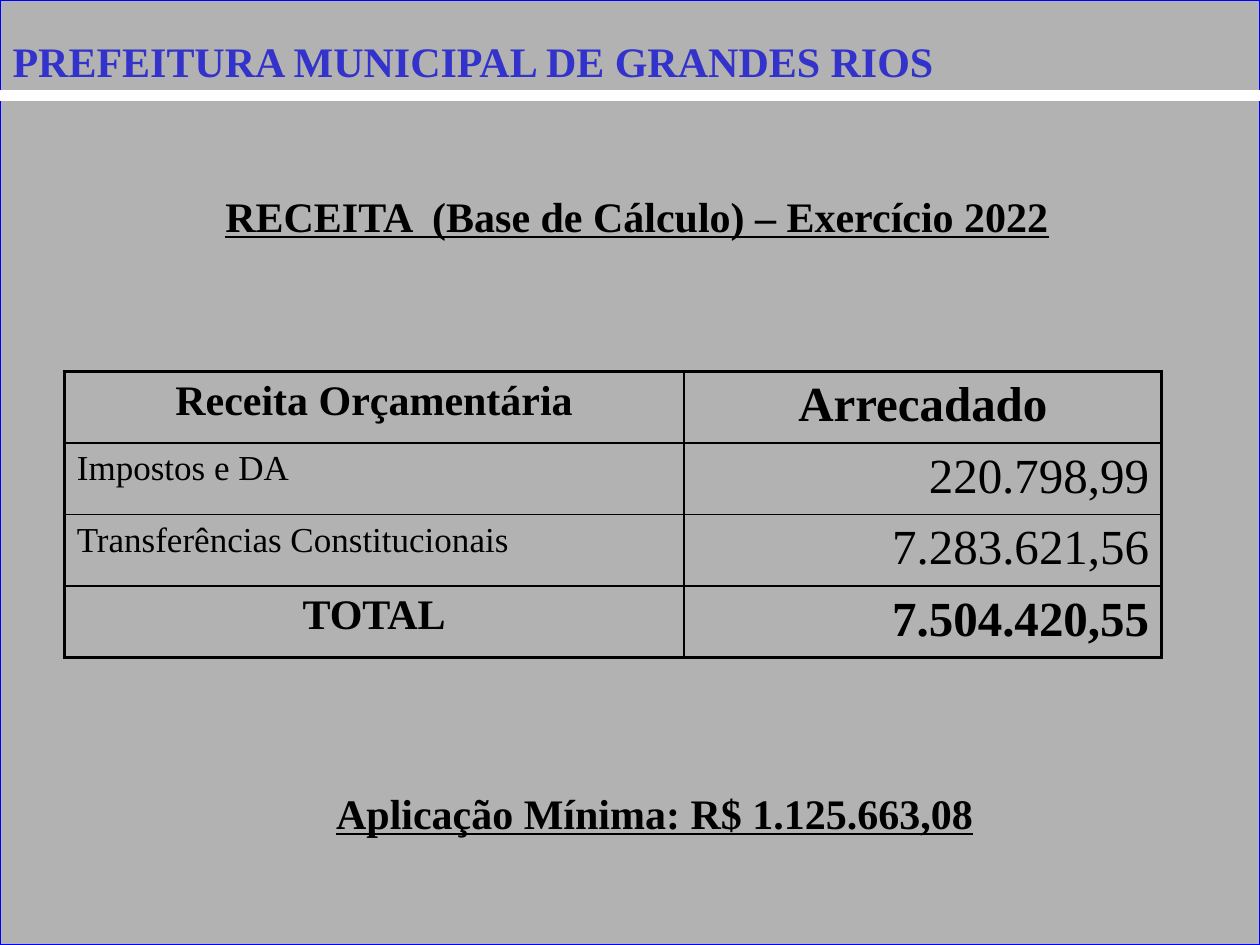
from lxml import etree
from pptx import Presentation, oxml
from pptx import util as u
from pptx.dml.color import RGBColor
from pptx.enum import shapes, text
from pptx.oxml import ns

Inches = u.Inches
CENTER, LEFT, RIGHT = text.PP_ALIGN.CENTER, text.PP_ALIGN.LEFT, text.PP_ALIGN.RIGHT


def color(hex_value):
    return RGBColor.from_string(hex_value)


def write(frame, content, size=24, fill="000000", bold=True, underline=False,
          align=CENTER, anchor=text.MSO_ANCHOR.TOP):
    frame.word_wrap = True
    frame.vertical_anchor = anchor
    paragraph = frame.paragraphs[0]
    paragraph.alignment = align
    run = paragraph.add_run()
    run.text = content
    font = run.font
    font.name = "Times New Roman"
    font.size = u.Pt(size)
    font.bold = bold
    font.underline = underline
    font.color.rgb = color(fill)
    return run


presentation = Presentation()
presentation.slide_width = Inches(10)
presentation.slide_height = Inches(7.5)
slide = presentation.slides.add_slide(presentation.slide_layouts[5])

# Grey backdrop with a thin blue frame
backdrop = slide.shapes.add_shape(
    shapes.MSO_SHAPE.RECTANGLE, 0, 0, Inches(10), Inches(7.5))
backdrop.shadow.inherit = False
backdrop.fill.solid()
backdrop.fill.fore_color.rgb = color("B2B2B2")
backdrop.line.color.rgb = color("0000FF")
backdrop.line.width = u.Pt(0.75)

# White rule under the header
rule = slide.shapes.add_connector(
    shapes.MSO_CONNECTOR.STRAIGHT, 0, Inches(0.76), Inches(10), Inches(0.76))
rule.line.color.rgb = color("FFFFFF")
rule.line.width = u.Pt(6)
etree.SubElement(rule._element.spPr, ns.qn("a:effectLst"))

# Header title with a text shadow, brought in front of the backdrop
title = slide.shapes.title
title.left, title.top = Inches(0), Inches(0.23)
title.width, title.height = Inches(8.23), Inches(0.5)
slide.shapes._spTree.append(title._element)
title_run = write(title.text_frame, "PREFEITURA MUNICIPAL DE GRANDES RIOS",
                  fill="3333CC", align=LEFT)
title.text_frame.auto_size = text.MSO_AUTO_SIZE.NONE
shadow = oxml.parse_xml(
    f'<a:effectLst {ns.nsdecls("a")}>'
    '<a:outerShdw dist="35921" dir="2700000"><a:srgbClr val="808080"/></a:outerShdw>'
    '</a:effectLst>')
title_run._r.rPr.find(ns.qn("a:solidFill")).addnext(shadow)

# Underlined captions above and below the table
captions = [
    ("RECEITA  (Base de Cálculo) – Exercício 2022",
     0.98, 0.85, 8.15, 1.11, text.MSO_ANCHOR.BOTTOM),
    ("Aplicação Mínima: R$ 1.125.663,08",
     2.44, 6.2, 5.51, 0.5, text.MSO_ANCHOR.TOP),
]
for content, left, top, width, height, anchor in captions:
    caption = slide.shapes.add_textbox(
        Inches(left), Inches(top), Inches(width), Inches(height))
    write(caption.text_frame, content, underline=True, anchor=anchor)

# Revenue table: label, label size, value, bold row
revenue = [
    ("Receita Orçamentária", 24, "Arrecadado", True),
    ("Impostos e DA", 20, "220.798,99", False),
    ("Transferências Constitucionais", 20, "7.283.621,56", False),
    ("TOTAL", 24, "7.504.420,55", True),
]
table = slide.shapes.add_table(
    len(revenue), 2, Inches(0.51), Inches(2.95), Inches(8.71), Inches(2.27)).table
table.first_row = table.horz_banding = False
table.columns[0].width = Inches(4.92)
table.columns[1].width = Inches(3.79)

last_row = len(revenue) - 1
for row, (label, label_size, value, bold) in enumerate(revenue):
    label_cell, value_cell = table.cell(row, 0), table.cell(row, 1)
    write(label_cell.text_frame, label, size=label_size, bold=bold,
          align=CENTER if bold else LEFT)
    write(value_cell.text_frame, value, size=28, bold=bold,
          align=RIGHT if row else CENTER)

    # Thick outer border, thin inner grid
    for column, cell in enumerate((label_cell, value_cell)):
        cell.fill.background()
        outer_sides = {"lnL": column == 0, "lnR": column == 1,
                       "lnT": row == 0, "lnB": row == last_row}
        for position, (side, outer) in enumerate(outer_sides.items()):
            width = u.Pt(2.25 if outer else 1)
            border = oxml.parse_xml(
                f'<a:{side} {ns.nsdecls("a")} w="{width}"><a:solidFill>'
                f'<a:srgbClr val="000000"/></a:solidFill></a:{side}>')
            cell._tc.get_or_add_tcPr().insert(position, border)

presentation.save("out.pptx")
